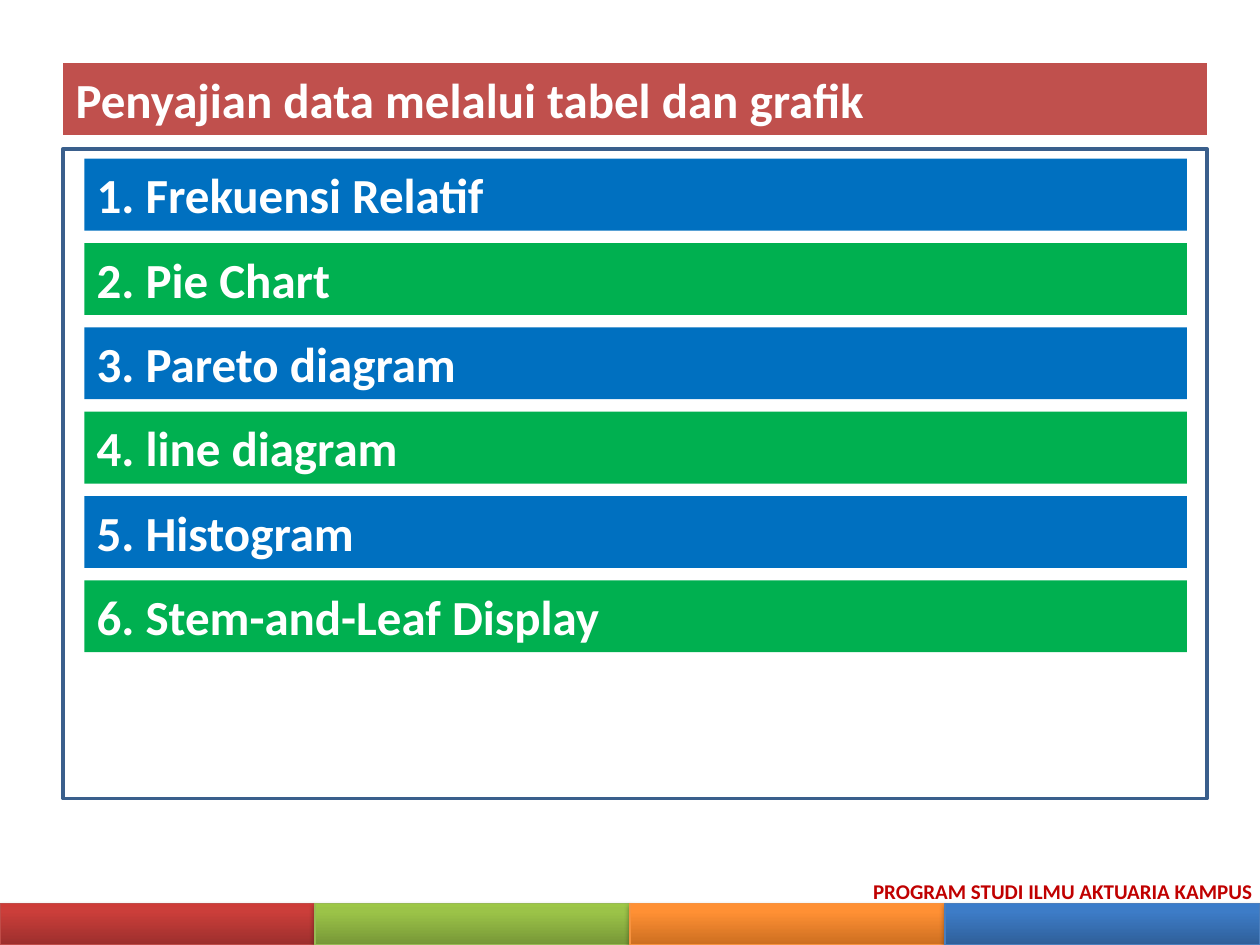
"""Build a slide listing six ways to present data in tables and graphs."""
from copy import deepcopy
from dataclasses import dataclass

from lxml.etree import SubElement
from pptx import Presentation
from pptx.dml.color import RGBColor
from pptx.enum.shapes import MSO_SHAPE
from pptx.enum.text import MSO_ANCHOR, MSO_AUTO_SIZE, PP_ALIGN
from pptx.oxml.ns import qn
from pptx.util import Cm, Pt

WHITE = RGBColor(0xFF, 0xFF, 0xFF)
BRICK = RGBColor(0xC0, 0x50, 0x4D)
BLUE = RGBColor(0x00, 0x70, 0xC0)
GREEN = RGBColor(0x00, 0xB0, 0x50)
NAVY = RGBColor(0x3A, 0x5F, 0x8C)
DARK_RED = RGBColor(0xC0, 0x00, 0x00)

HEADING = {"name": "Calibri", "size": Pt(28), "bold": True}
CREDIT = {"name": "Calibri", "size": Pt(12), "bold": True}
FRAME_LEFT, FRAME_WIDTH = 1.27, 23.06
BAR_LEFT, BAR_TOP, BAR_WIDTH, BAR_HEIGHT, BAR_PITCH = 1.7, 3.2, 22.23, 1.45, 1.7
STRIP_TOP, STRIP_WIDTH, STRIP_HEIGHT = 18.21, 6.35, 0.84
STOPS = (0, 0.8, 1)
TOPICS = ("Frekuensi Relatif", "Pie Chart", "Pareto diagram",
          "line diagram", "Histogram", "Stem-and-Leaf Display")


@dataclass
class Box:
    """Position and size in centimetres."""
    left: float
    top: float
    width: float
    height: float

    def emu(self) -> tuple:
        """Return the four lengths as Cm values."""
        return tuple(Cm(v) for v in (self.left, self.top, self.width, self.height))


@dataclass
class Strip:
    """Gradient and outline colours of one footer block."""
    stops: tuple
    line: str


STRIPS = (
    Strip(("9C2F2D", "CB3E3A", "CE3B37"), "BF4C48"),
    Strip(("779737", "9BC348", "9DC746"), "98B955"),
    Strip(("CC6E20", "FF9034", "FF9136"), "F69240"),
    Strip(("2F5F99", "3D7CC7", "3A7CCB"), "4B7EBC"),
)


def add_rect(s, box: Box):
    """Add a rectangle without shadow."""
    sp = s.shapes.add_shape(MSO_SHAPE.RECTANGLE, *box.emu())
    sp.shadow.inherit = False
    return sp


def write(sp, text: str, font: dict, color: RGBColor, align=PP_ALIGN.LEFT) -> None:
    """Put one formatted line of text into a shape."""
    tf = sp.text_frame
    tf.word_wrap = True
    tf.vertical_anchor = MSO_ANCHOR.TOP
    p = tf.paragraphs[0]
    p.alignment = align
    r = p.add_run()
    r.text = text
    for key, value in font.items():
        setattr(r.font, key, value)
    r.font.color.rgb = color


def add_bar(s, index: int, topic: str) -> None:
    """Add one numbered topic bar."""
    sp = add_rect(s, Box(BAR_LEFT, BAR_TOP + index * BAR_PITCH, BAR_WIDTH, BAR_HEIGHT))
    sp.fill.solid()
    sp.fill.fore_color.rgb = (BLUE, GREEN)[index % 2]
    sp.line.fill.background()
    write(sp, f"{index + 1}. {topic}", HEADING, WHITE)
    pPr = sp.text_frame.paragraphs[0]._p.get_or_add_pPr()
    pPr.set("marL", str(Cm(0.95)))
    pPr.set("indent", str(-Cm(0.95)))


def add_strip(s, index: int, strip: Strip) -> None:
    """Add one footer block with a gradient and a soft shadow."""
    sp = add_rect(s, Box(index * STRIP_WIDTH, STRIP_TOP, STRIP_WIDTH, STRIP_HEIGHT))
    sp.fill.gradient()
    sp.fill.gradient_angle = 90
    spPr = sp._element.spPr
    stop_list = spPr.find(".//" + qn("a:gsLst"))
    stop_list.append(deepcopy(stop_list[-1]))
    for stop, position, color in zip(sp.fill.gradient_stops, STOPS, strip.stops):
        stop.position = position
        stop.color.rgb = RGBColor.from_string(color)
    sp.line.color.rgb = RGBColor.from_string(strip.line)
    sp.line.width = Pt(0.75)
    shadow = SubElement(spPr.find(qn("a:effectLst")), qn("a:outerShdw"),
                        blurRad=str(Pt(3.1)), dist=str(Pt(1.8)),
                        dir="5400000", rotWithShape="0")
    color = SubElement(shadow, qn("a:srgbClr"), val="000000")
    SubElement(color, qn("a:alpha"), val="35000")


def main() -> None:
    """Build and save the slide."""
    prs = Presentation()
    prs.slide_width, prs.slide_height = Cm(25.4), Cm(19.05)
    s = prs.slides.add_slide(prs.slide_layouts[5])

    title = s.shapes.title
    title.left, title.top, title.width, title.height = Box(
        FRAME_LEFT, 1.27, FRAME_WIDTH, BAR_HEIGHT).emu()
    title.fill.solid()
    title.fill.fore_color.rgb = BRICK
    title.text_frame.auto_size = MSO_AUTO_SIZE.NONE
    write(title, "Penyajian data melalui tabel dan grafik", HEADING, WHITE)

    frame = add_rect(s, Box(FRAME_LEFT, 3, FRAME_WIDTH, 13.1))
    frame.fill.background()
    frame.line.color.rgb = NAVY
    frame.line.width = Pt(2)

    for index, topic in enumerate(TOPICS):
        add_bar(s, index, topic)
    for index, strip in enumerate(STRIPS):
        add_strip(s, index, strip)

    credit = s.shapes.add_textbox(*Box(16.5, 17.58, 9, 0.76).emu())
    write(credit, "PROGRAM STUDI ILMU AKTUARIA KAMPUS", CREDIT, DARK_RED, PP_ALIGN.RIGHT)

    prs.save("out.pptx")


if __name__ == "__main__":
    main()
